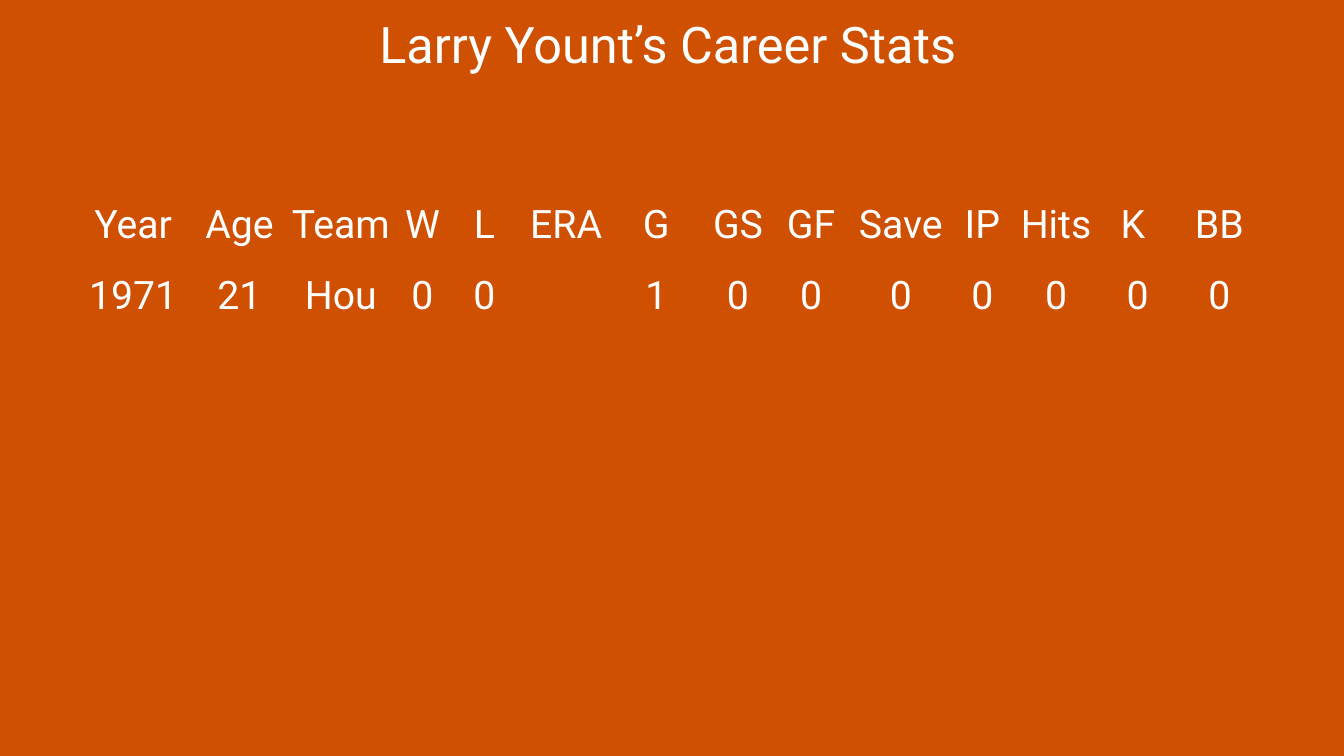
from pptx import Presentation
from pptx.dml.color import RGBColor
from pptx.enum.text import MSO_ANCHOR, MSO_AUTO_SIZE, PP_ALIGN
from pptx.oxml.ns import qn
from pptx.util import Inches, Pt

ORANGE = "D05002"
WHITE = "FFFFFF"
NO_GRID_STYLE = "{2D5ABB26-0587-4C30-8999-92F81FD0307C}"
ROW_HEIGHT = 0.71
STATS = [
    ("Year", "1971", 1.3),
    ("Age", "21", 0.81),
    ("Team", "Hou", 1.2),
    ("W", "0", 0.42),
    ("L", "0", 0.81),
    ("ERA", "", 0.81),
    ("G", "1", 0.98),
    ("GS", "0", 0.64),
    ("GF", "0", 0.81),
    ("Save", "0", 0.97),
    ("IP", "0", 0.65),
    ("Hits", "0", 0.81),
    ("K ", "0", 0.81),
    ("BB", "0", 0.81),
]


def paint(fill, color):
    fill.solid()
    fill.fore_color.rgb = RGBColor.from_string(color)


def write(frame, text, size):
    para = frame.paragraphs[0]
    para.alignment = PP_ALIGN.CENTER
    span = para.add_run()
    span.text = text
    for name, value in {"name": "Roboto", "size": Pt(size)}.items():
        setattr(span.font, name, value)
    paint(span.font.fill, WHITE)


def add_title(page, text):
    box = page.shapes.add_textbox(Inches(0), Inches(0.08), Inches(13.25), Inches(0.71))
    frame = box.text_frame
    frame.word_wrap = True
    frame.auto_size = MSO_AUTO_SIZE.SHAPE_TO_FIT_TEXT
    write(frame, text, 36)


def fill_cell(cell, text):
    layout = {
        "margin_left": Inches(0.01),
        "margin_right": Inches(0.01),
        "margin_top": Inches(0.01),
        "margin_bottom": 0,
        "vertical_anchor": MSO_ANCHOR.BOTTOM,
    }
    for name, value in layout.items():
        setattr(cell, name, value)
    paint(cell.fill, ORANGE)
    if text:
        write(cell.text_frame, text, 28)


def add_stats(page, stats):
    labels, values, widths = zip(*stats)
    rows = [labels, values]
    table = page.shapes.add_table(
        len(rows), len(stats), Inches(0.67), Inches(1.75),
        Inches(sum(widths)), Inches(ROW_HEIGHT * len(rows)),
    ).table
    table.first_row = table.horz_banding = False
    table._tbl.tblPr.find(qn("a:tableStyleId")).text = NO_GRID_STYLE
    for column, width in zip(table.columns, widths):
        column.width = Inches(width)
    for row, texts in zip(table.rows, rows):
        row.height = Inches(ROW_HEIGHT)
        for cell, text in zip(row.cells, texts):
            fill_cell(cell, text)


def main():
    deck = Presentation()
    deck.slide_width, deck.slide_height = Inches(13.33), Inches(7.5)
    page = deck.slides.add_slide(deck.slide_layouts[6])
    paint(page.background.fill, ORANGE)
    add_title(page, "Larry Yount’s Career Stats")
    add_stats(page, STATS)
    deck.save("out.pptx")


if __name__ == "__main__":
    main()
